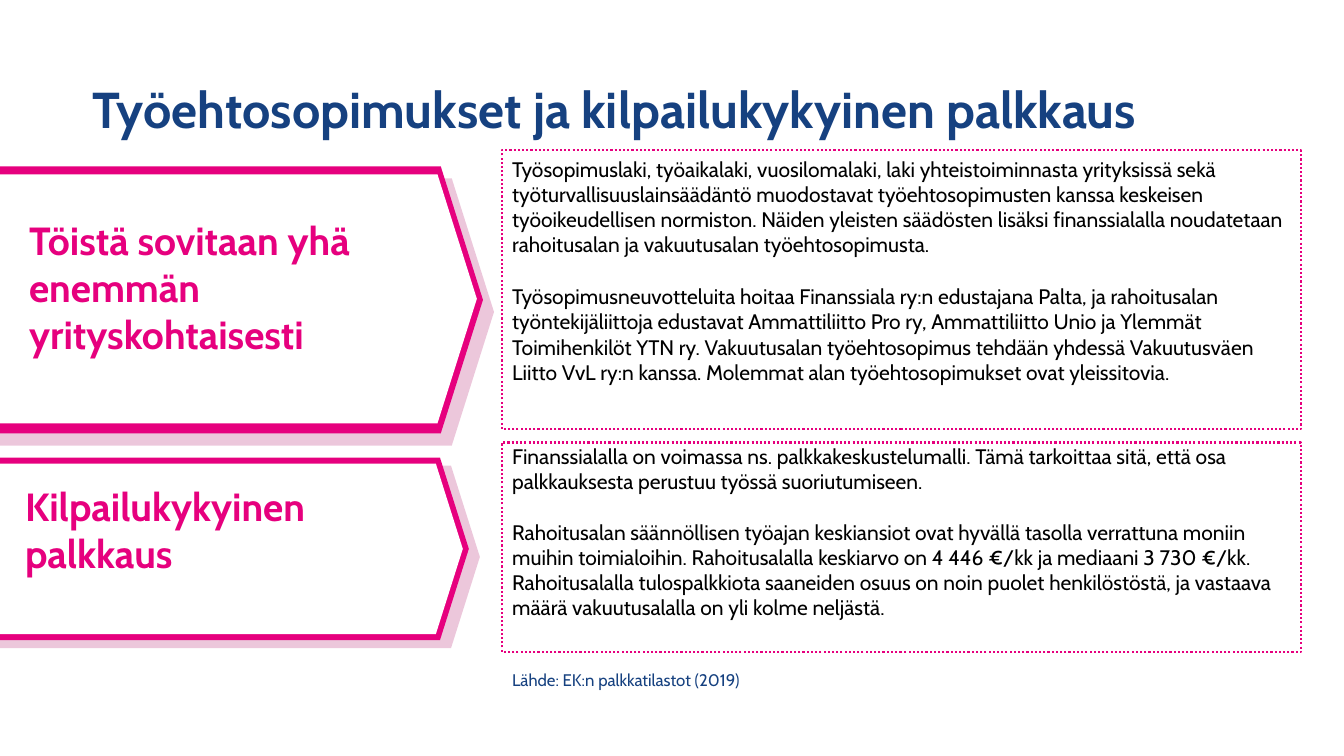
import pptx
import pptx.dml.color
import pptx.enum.dml
import pptx.enum.shapes
import pptx.enum.text
import pptx.util
from lxml import etree

PX = 9144  # EMU per px, 100 px to the inch
FONT = "Cabin"
PINK, SHADE, BLUE, BLACK, WHITE = "E6007E", "AD005F", "164180", "000000", "FFFFFF"
PLATE_POINT = 0.158

AGREEMENTS = [
    "Työsopimuslaki, työaikalaki, vuosilomalaki, laki yhteistoiminnasta yrityksissä sekä "
    "työturvallisuuslainsäädäntö muodostavat työehtosopimusten kanssa keskeisen "
    "työoikeudellisen normiston. Näiden yleisten säädösten lisäksi finanssialalla noudatetaan "
    "rahoitusalan ja vakuutusalan työehtosopimusta.",
    "Työsopimusneuvotteluita hoitaa Finanssiala ry:n edustajana Palta, ja rahoitusalan "
    "työntekijäliittoja edustavat Ammattiliitto Pro ry, Ammattiliitto Unio ja Ylemmät "
    "Toimihenkilöt YTN ry. Vakuutusalan työehtosopimus tehdään yhdessä Vakuutusväen "
    "Liitto VvL ry:n kanssa. Molemmat alan työehtosopimukset ovat yleissitovia.",
]
PAY = [
    "Finanssialalla on voimassa ns. palkkakeskustelumalli. Tämä tarkoittaa sitä, että osa "
    "palkkauksesta perustuu työssä suoriutumiseen.",
    "Rahoitusalan säännöllisen työajan keskiansiot ovat hyvällä tasolla verrattuna moniin "
    "muihin toimialoihin. Rahoitusalalla keskiarvo on 4 446 €/kk ja mediaani 3 730 €/kk. "
    "Rahoitusalalla tulospalkkiota saaneiden osuus on noin puolet henkilöstöstä, ja vastaava "
    "määrä vakuutusalalla on yli kolme neljästä.",
]


def rgb(value):
    return pptx.dml.color.RGBColor.from_string(value)


def px(*lengths):
    return [pptx.util.Emu(n * PX) for n in lengths]


def move(sp, box):
    sp.left, sp.top, sp.width, sp.height = px(*box)


def write(sp, texts, size, color, bold=False, middle=False, gap=0):
    tf = sp.text_frame
    tf.word_wrap = True
    tf.auto_size = pptx.enum.text.MSO_AUTO_SIZE.NONE
    anchor = pptx.enum.text.MSO_ANCHOR
    tf.vertical_anchor = anchor.MIDDLE if middle else anchor.TOP
    for i, text in enumerate(texts):
        p = tf.add_paragraph() if i else tf.paragraphs[0]
        p.alignment = pptx.enum.text.PP_ALIGN.LEFT
        p.space_before = pptx.util.Pt(gap if i else 0)
        r = p.add_run()
        r.text = text
        r.font.name = FONT
        r.font.size = pptx.util.Pt(size)
        r.font.bold = bold
        r.font.color.rgb = rgb(color)


def add_label(slide, box, text, size, color, bold=False, middle=False):
    write(slide.shapes.add_textbox(*px(*box)), [text], size, color, bold, middle)


def add_plate(slide, top, right, height, color, alpha=None):
    """Pentagon running from the left slide edge to its point."""
    kind = pptx.enum.shapes.MSO_SHAPE.PENTAGON
    sp = slide.shapes.add_shape(kind, *px(0, top, right, height))
    sp.adjustments[0] = PLATE_POINT
    sp.shadow.inherit = False
    sp.line.fill.background()
    sp.fill.solid()
    sp.fill.fore_color.rgb = rgb(color)
    if alpha:
        clr = sp.fill._xPr.find(".//" + pptx.oxml.ns.qn("a:srgbClr"))
        etree.SubElement(clr, pptx.oxml.ns.qn("a:alpha")).set("val", str(alpha * 1000))


def add_frame(slide, box):
    sp = slide.shapes.add_shape(pptx.enum.shapes.MSO_SHAPE.RECTANGLE, *px(*box))
    sp.shadow.inherit = False
    sp.fill.background()
    sp.line.color.rgb = rgb(PINK)
    sp.line.width = pptx.util.Pt(1.5)
    sp.line.dash_style = pptx.enum.dml.MSO_LINE.ROUND_DOT


def fill_body(sp, box, texts, gap):
    move(sp, box)
    write(sp, texts, 15, BLACK, gap=gap)
    for p in sp.text_frame.paragraphs:
        pPr = p._p.get_or_add_pPr()
        pPr.set("marL", "0")
        pPr.set("indent", "0")
        etree.SubElement(pPr, pptx.oxml.ns.qn("a:buNone"))


def main():
    prs = pptx.Presentation()
    prs.slide_width, prs.slide_height = px(1333, 750)
    slide = prs.slides.add_slide(prs.slide_layouts[3])
    title, agreements, pay = slide.placeholders

    # Title
    move(title, (82, 39, 1150, 145))
    write(title, ["Työehtosopimukset ja kilpailukykyinen palkkaus"], 36, BLUE, True, True)
    title.text_frame.paragraphs[0].line_spacing = 0.9

    # Arrow plates: shade, pink edge, white face
    plates = [
        [(177, 490, 265), (165, 479, 265), (173, 473, 247)],
        [(462, 476, 181), (454, 465, 181), (460, 459, 169)],
    ]
    for shade, edge, face in plates:
        add_plate(slide, *shade, SHADE, 22)
        add_plate(slide, *edge, PINK)
        add_plate(slide, *face, WHITE)
    add_label(slide, (19, 192, 408, 185), "Töistä sovitaan yhä enemmän yrityskohtaisesti",
              28, PINK, True, True)
    add_label(slide, (15, 473, 403, 104), "Kilpailukykyinen palkkaus", 28, PINK, True, True)

    # Dotted frames and their body text
    add_frame(slide, (498, 149, 792, 277))
    add_frame(slide, (498, 439, 792, 208))
    fill_body(agreements, (498, 150, 801, 273), AGREEMENTS, 19)
    fill_body(pay, (498, 435, 801, 187), PAY, 18)

    # Source line
    add_label(slide, (498, 660, 272, 50), "Lähde: EK:n palkkatilastot (2019)", 12, BLUE)

    prs.save("out.pptx")


if __name__ == "__main__":
    main()
